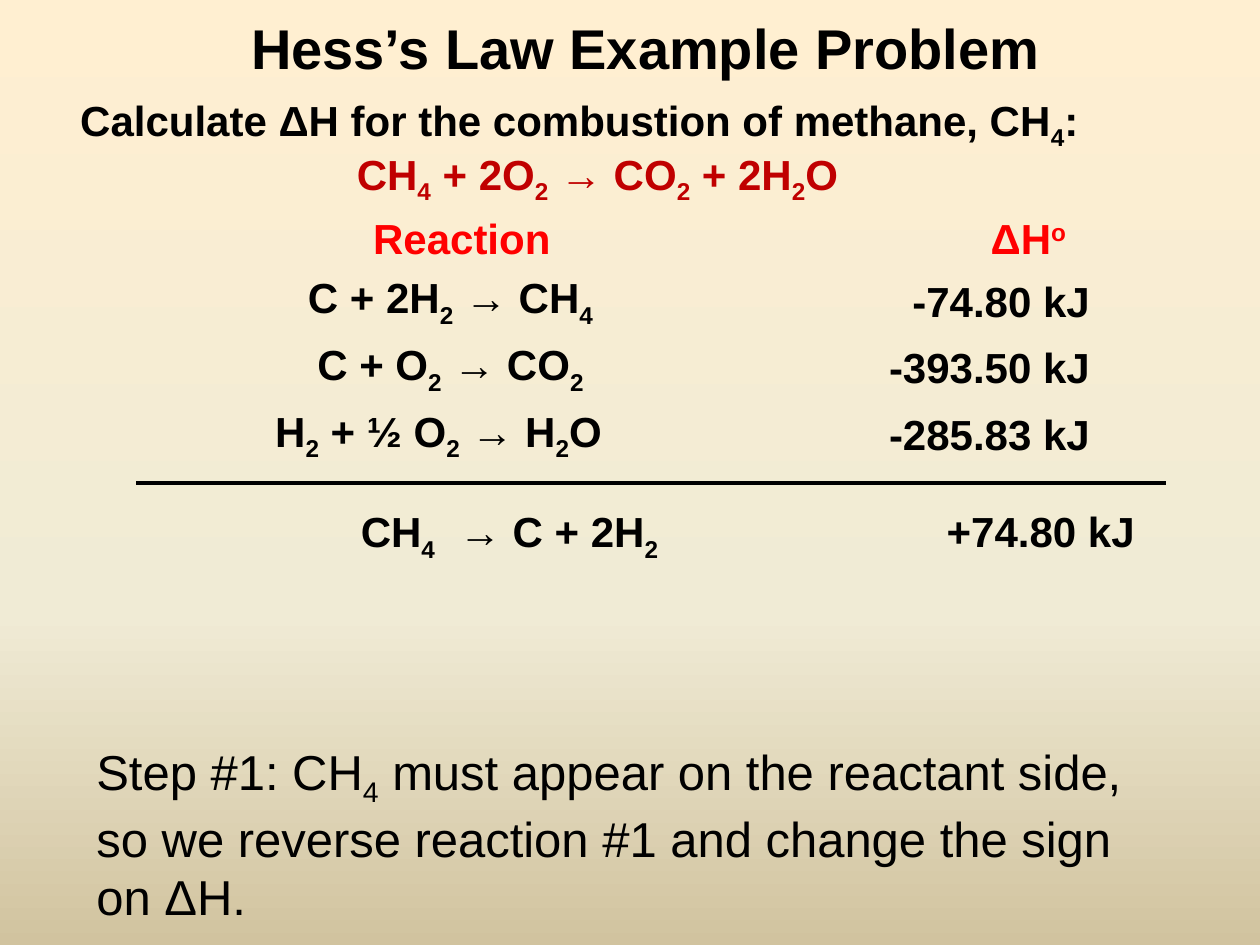
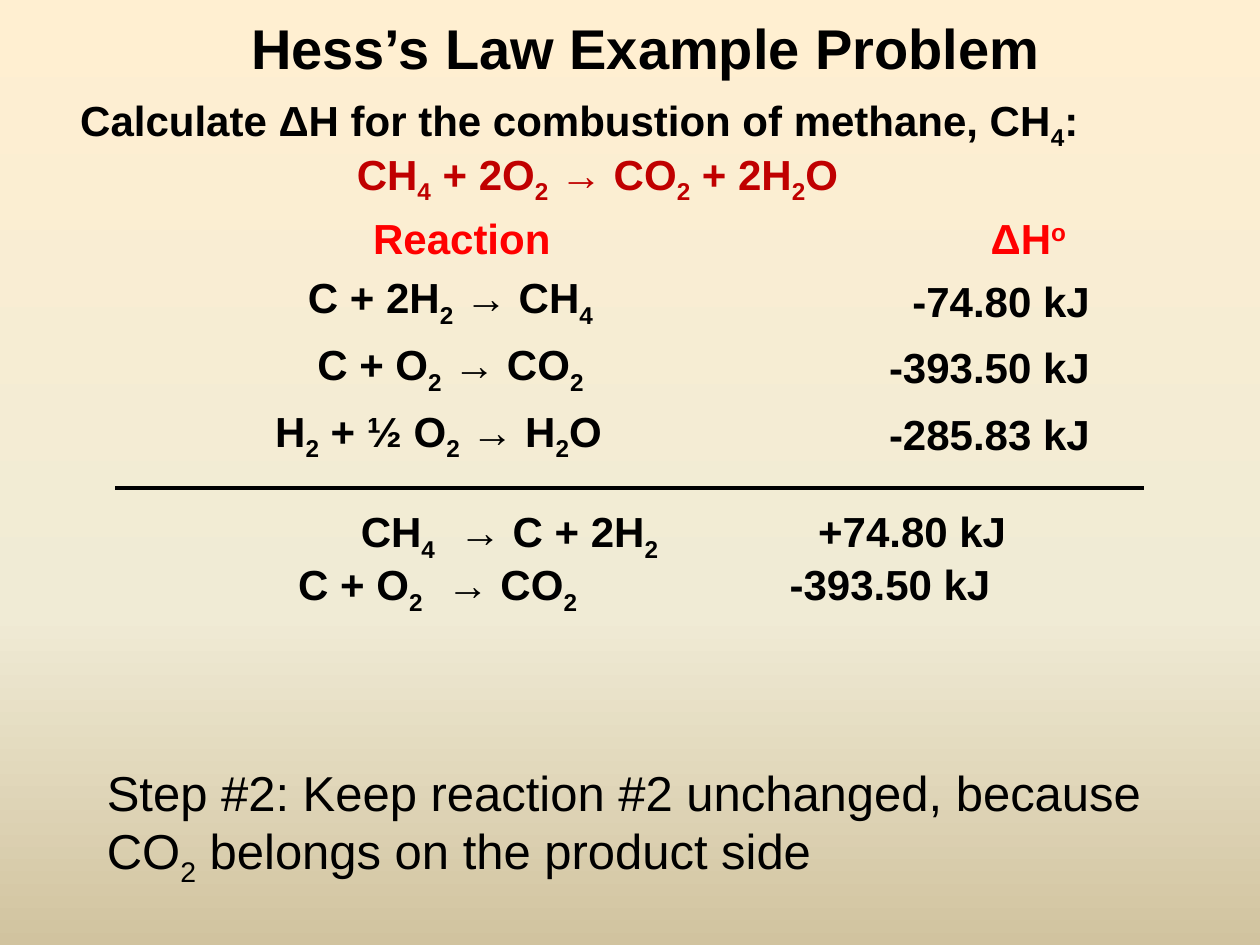
from copy import deepcopy

from lxml import etree
from pptx import Presentation
from pptx.dml.color import RGBColor
from pptx.enum.shapes import MSO_CONNECTOR
from pptx.enum.text import MSO_ANCHOR, MSO_AUTO_SIZE, PP_ALIGN
from pptx.oxml.ns import qn
from pptx.util import Inches, Pt

LEFT, CENTER, RIGHT = PP_ALIGN.LEFT, PP_ALIGN.CENTER, PP_ALIGN.RIGHT
MIDDLE, TOP = MSO_ANCHOR.MIDDLE, MSO_ANCHOR.TOP
FIXED = MSO_AUTO_SIZE.NONE
STRAIGHT = MSO_CONNECTOR.STRAIGHT

COLORS = {"ink": "000000", "target": "C00000", "header": "FF0000",
          "sky": "FFEFD1", "sand": "F0EBD5", "earth": "D1C39F"}
TITLE = {"size": Pt(32), "bold": True}
FORMULA = {"size": Pt(24), "bold": True}
STEP = {"size": Pt(28), "bold": False}
PLAIN_TABLE = "{2D5ABB26-0587-4C30-8999-92F81FD0307C}"
TITLE_ONLY = 5

# Pieces between bars are subscripts; a caret makes one a superscript.
REACTIONS = [("Reaction", "ΔH|^o|"),
             ("C + 2H|2| → CH|4|", "-74.80 kJ"),
             ("C + O|2| → CO|2|", "-393.50 kJ"),
             ("H|2| + ½ O|2| → H|2|O", "-285.83 kJ")]


def grid(count):
    """Length of a number of grid units; the page is 120 by 90 units."""
    return Inches(count / 12)


def area(*units):
    return [grid(unit) for unit in units]


def write(para, text, style, color="ink", align=LEFT):
    para.alignment = align
    for index, piece in enumerate(text.split("|")):
        if not piece:
            continue
        span = para.add_run()
        span.text = piece.lstrip("^")
        for name, value in {"name": "Arial", **style}.items():
            setattr(span.font, name, value)
        span.font.color.rgb = RGBColor.from_string(COLORS[color])
        if index % 2:
            shift = "30000" if piece.startswith("^") else "-25000"
            span._r.get_or_add_rPr().set("baseline", shift)


def set_tabs(para, stops):
    tab_list = etree.SubElement(para._p.get_or_add_pPr(), qn("a:tabLst"))
    for stop in stops:
        etree.SubElement(tab_list, qn("a:tab"), pos=str(Inches(stop)), algn="l")


def paint_background(master):
    fill = master.background.fill
    fill.gradient()
    fill.gradient_angle = 270
    stop_list = next(master.element.iter(qn("a:gsLst")))
    stop_list.append(deepcopy(stop_list[-1]))
    bands = [("sky", 0), ("sand", 0.65), ("earth", 1)]
    for stop, (color, position) in zip(fill.gradient_stops, bands):
        stop.color.rgb = RGBColor.from_string(COLORS[color])
        stop.position = position


def add_title(page, text):
    title = page.shapes.title
    title.left, title.top, title.width, title.height = area(22, 0, 79, 9)
    frame = title.text_frame
    frame.auto_size, frame.vertical_anchor = FIXED, MIDDLE
    write(frame.paragraphs[0], text, TITLE, align=CENTER)


def add_plain_table(page, place, widths, heights):
    holder = page.shapes.add_table(len(heights), len(widths), *area(*place))
    next(holder.element.iter(qn("a:tableStyleId"))).text = PLAIN_TABLE
    table = holder.table
    table.first_row = table.horz_banding = False
    for column, width in zip(table.columns, widths):
        column.width = Inches(width)
    for row, height in zip(table.rows, heights):
        row.height = Inches(height)
    for cell in table.iter_cells():
        cell.fill.background()
        cell.vertical_anchor = MIDDLE
        cell.margin_top = cell.margin_bottom = Inches(0.02)
    return table


def add_question(page):
    table = add_plain_table(page, (5, 8, 110, 13), [8.65, 0.52], [1.08])
    frame = table.cell(0, 0).text_frame
    question = frame.paragraphs[0]
    write(question, "Calculate ΔH for the combustion of methane, CH|4|:", FORMULA)
    question._p.get_or_add_pPr().set("marL", str(Inches(0.12)))
    write(frame.add_paragraph(), "CH|4| + 2O|2| → CO|2| + 2H|2|O", FORMULA,
          "target", CENTER)


def add_reactions(page):
    table = add_plain_table(page, (12, 20, 93, 25), [4.96, 2.79],
                            [0.47] + [0.53] * 3)
    for row, texts in enumerate(REACTIONS):
        color = "ink" if row else "header"
        for column, (text, align) in enumerate(zip(texts, (CENTER, RIGHT))):
            write(table.cell(row, column).text_frame.paragraphs[0], text,
                  FORMULA, color, align)
    # Indents that bring the formulas and the header onto their axes
    table.cell(0, 0).margin_left = Inches(0.47)
    table.cell(0, 1).margin_right = Inches(0.29)
    for row in (1, 2):
        table.cell(row, 0).margin_left = Inches(0.29)


def add_text(page, place, text, style, inset=0.1, stops=()):
    box = page.shapes.add_textbox(*area(*place))
    frame = box.text_frame
    frame.word_wrap, frame.vertical_anchor = True, TOP
    frame.margin_left = Inches(inset)
    write(frame.paragraphs[0], text, style)
    if stops:
        set_tabs(frame.paragraphs[0], stops)


def add_reversed_methane(page, value_stop):
    add_text(page, (31, 47.6, 81, 6), "CH|4|\t→ C + 2H|2|\t+74.80 kJ", FORMULA,
             0.28, (0.78, value_stop))


def add_rule(page, left, top):
    rule = page.shapes.add_connector(STRAIGHT, *area(left, top, left + 98, top))
    rule.line.color.rgb = RGBColor.from_string(COLORS["ink"])
    rule.line.width = Pt(2.25)
    etree.SubElement(rule.element.spPr, qn("a:effectLst"))


def add_problem_page(deck):
    page = deck.slides.add_slide(deck.slide_layouts[TITLE_ONLY])
    add_title(page, "Hess’s Law Example Problem")
    add_question(page)
    add_reactions(page)
    return page


def main():
    deck = Presentation()
    deck.slide_width, deck.slide_height = area(120, 90)
    paint_background(deck.slide_master)

    # Step 1: reverse the first reaction
    page = add_problem_page(deck)
    add_text(page, (8, 70, 105, 12.5),
             "Step #1: CH|4| must appear on the reactant side, so we reverse "
             "reaction #1 and change the sign on ΔH.", STEP)
    add_reversed_methane(page, 4.65)
    add_rule(page, 13, 46)

    # Step 2: keep the second reaction
    page = add_problem_page(deck)
    add_reversed_methane(page, 3.63)
    add_text(page, (9, 72, 104, 12.5),
             "Step #2: Keep reaction #2 unchanged, because CO|2| belongs on "
             "the product side", STEP)
    add_text(page, (26, 52.6, 82, 6), "C + O|2|\t→ CO|2|\t-393.50 kJ", FORMULA,
             0.2, (1.18, 3.9))
    add_rule(page, 11, 46.5)

    deck.save("out.pptx")


if __name__ == "__main__":
    main()
